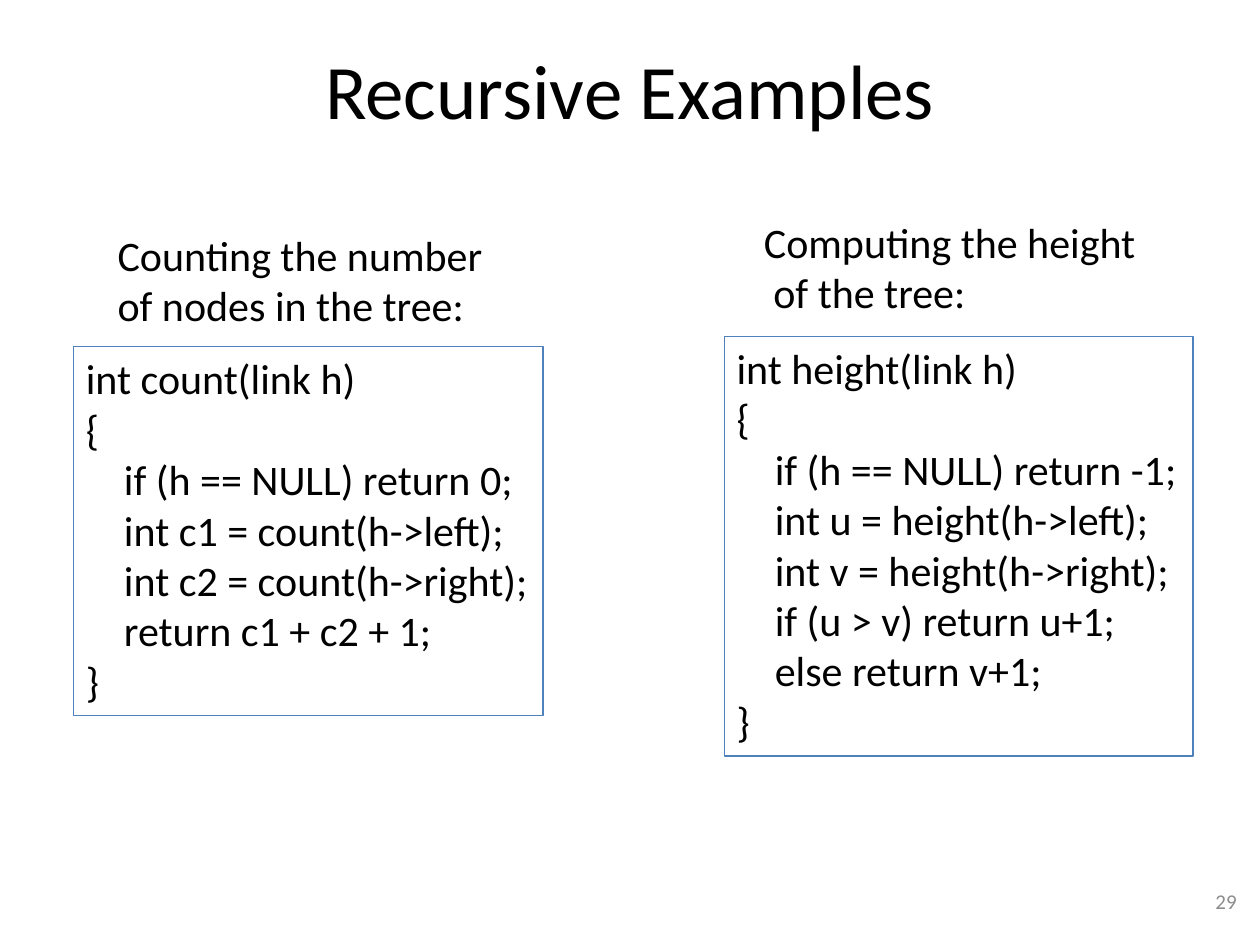
from pptx import Presentation
from pptx.dml.color import RGBColor
from pptx.enum.shapes import MSO_SHAPE
from pptx.enum.text import MSO_ANCHOR, MSO_AUTO_SIZE, PP_ALIGN
from pptx.util import Cm, Pt

BLACK = RGBColor(0x00, 0x00, 0x00)
GREY = RGBColor(0x8C, 0x8C, 0x8C)
BLUE = RGBColor(0x4F, 0x81, 0xBD)

COUNT = """int count(link h)
{
if (h == NULL) return 0;
int c1 = count(h->left);
int c2 = count(h->right);
return c1 + c2 + 1;
}"""

HEIGHT = """int height(link h)
{
if (h == NULL) return -1;
int u = height(h->left);
int v = height(h->right);
if (u > v) return u+1;
else return v+1;
}"""


class Deck:
    font = "Calibri"
    size = 24
    step = 0.77

    def __init__(self):
        self.prs = Presentation()
        self.prs.slide_width = Cm(25.4)
        self.prs.slide_height = Cm(19.05)
        self.slide = self.prs.slides.add_slide(self.prs.slide_layouts[5])

    def put(self, shape, text, size=size, color=BLACK, align=PP_ALIGN.LEFT):
        """Fill a shape with styled text and return its frame."""
        frame = shape.text_frame
        frame.text = text
        for para in frame.paragraphs:
            para.alignment = align
            for run in para.runs:
                run.font.name = self.font
                run.font.size = Pt(size)
                run.font.color.rgb = color
        return frame

    def fit(self, frame):
        frame.word_wrap = False
        frame.auto_size = MSO_AUTO_SIZE.SHAPE_TO_FIT_TEXT
        frame.vertical_anchor = MSO_ANCHOR.TOP

    def indent(self, paras, width):
        for para in paras:
            props = para._p.get_or_add_pPr()
            props.set("marL", str(Cm(width)))
            props.set("indent", "0")

    def title(self, text, *box):
        shape = self.slide.shapes.title
        shape.left, shape.top, shape.width, shape.height = map(Cm, box)
        frame = self.put(shape, text, 44, align=PP_ALIGN.CENTER)
        frame.vertical_anchor = MSO_ANCHOR.MIDDLE

    def number(self, text, *box):
        shape = self.slide.shapes.add_textbox(*map(Cm, box))
        frame = self.put(shape, text, 12, GREY, PP_ALIGN.RIGHT)
        frame.word_wrap = True
        frame.vertical_anchor = MSO_ANCHOR.MIDDLE

    def label(self, text, *box, inset=0):
        """Add a heading whose later lines are set in by inset."""
        shape = self.slide.shapes.add_textbox(*map(Cm, box))
        frame = self.put(shape, text)
        self.fit(frame)
        self.indent(frame.paragraphs[1:], inset)

    def code(self, text, *box):
        """Add a framed function whose body is set in by one step."""
        shape = self.slide.shapes.add_shape(MSO_SHAPE.RECTANGLE, *map(Cm, box))
        shape.shadow.inherit = False
        shape.fill.background()
        shape.line.color.rgb = BLUE
        shape.line.width = Pt(0.75)
        frame = self.put(shape, text)
        self.fit(frame)
        self.indent(frame.paragraphs[2:-1], self.step)


def main():
    deck = Deck()
    deck.title("Recursive Examples", 1.27, 0.2, 22.86, 3.18)
    deck.number("29", 19.25, 17.65, 5.93, 1.02)
    deck.code(COUNT, 1.48, 6.99, 9.47, 7.44)
    deck.code(HEIGHT, 14.6, 6.78, 9.45, 8.46)
    deck.label("Counting the number\nof nodes in the tree:",
               2.12, 4.5, 8.13, 2.31)
    deck.label("Computing the height\nof the tree:",
               15.15, 4.24, 8.08, 2.31, inset=0.19)
    deck.prs.save("out.pptx")


if __name__ == "__main__":
    main()
